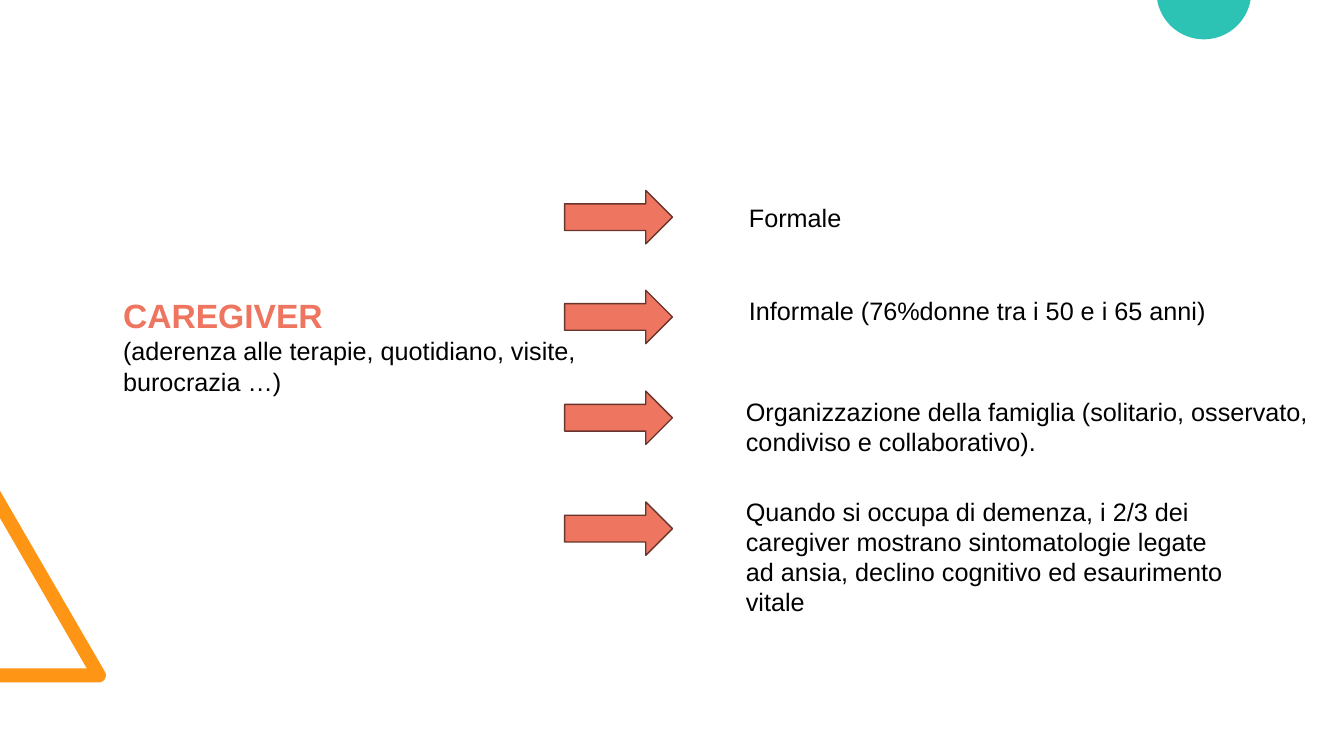
from math import asin, cos, degrees, radians, sin

from pptx import Presentation
from pptx.dml.color import RGBColor
from pptx.enum.shapes import MSO_SHAPE as Preset
from pptx.enum.text import MSO_ANCHOR as Anchor, MSO_AUTO_SIZE as AutoSize, PP_ALIGN as Align
from pptx.util import Inches, Pt

CORAL = RGBColor(0xEE, 0x76, 0x61)
BROWN = RGBColor(0x68, 0x34, 0x2B)
ORANGE = RGBColor(0xFF, 0x95, 0x14)
TEAL = RGBColor(0x2C, 0xC3, 0xB4)
BLACK = RGBColor(0, 0, 0)

ARROW_LEFT, ARROW_WIDTH, ARROW_HEIGHT = 5.6, 1.07, 0.53
ASPECTS = [
    (1.89, (7.33, 1.96, 3.44, 0.4), "Formale"),
    (2.88, (7.33, 2.88, 5.23, 0.4), "Informale (76%donne tra i 50 e i 65 anni)"),
    (3.88, (7.3, 3.88, 6, 0.71),
     "Organizzazione della famiglia (solitario, osservato, condiviso e collaborativo)."),
    (4.98, (7.3, 4.87, 5.1, 1.31),
     "Quando si occupa di demenza, i 2/3 dei caregiver mostrano sintomatologie "
     "legate ad ansia, declino cognitivo ed esaurimento vitale"),
]


def arc(center_x, center_y, radius, start, end, steps=40):
    """Return points along a circular arc, with angles in degrees."""
    angles = [radians(start + (end - start) * step / steps) for step in range(steps + 1)]
    return [(center_x + radius * cos(angle), center_y + radius * sin(angle)) for angle in angles]


class SlideBuilder:
    """Draw styled elements on one slide."""

    def __init__(self, slide, font="Arial", size=18):
        self.slide = slide
        self.font = font
        self.size = size

    def add_text_run(self, paragraph, text, size=None, color=BLACK, bold=False):
        paragraph.alignment = Align.LEFT
        run = paragraph.add_run()
        run.text = text
        run.font.name = self.font
        run.font.size = Pt(size or self.size)
        run.font.bold = bold
        run.font.color.rgb = color

    def title(self, box, heading, detail):
        shape = self.slide.shapes.title
        shape.left, shape.top, shape.width, shape.height = map(Inches, box)
        frame = shape.text_frame
        frame.word_wrap = True
        frame.auto_size = AutoSize.NONE
        frame.vertical_anchor = Anchor.TOP
        self.add_text_run(frame.paragraphs[0], heading, 24, CORAL, True)
        self.add_text_run(frame.add_paragraph(), detail)

    def text(self, box, text):
        frame = self.slide.shapes.add_textbox(*map(Inches, box)).text_frame
        frame.word_wrap = True
        self.add_text_run(frame.paragraphs[0], text)

    def arrow(self, top):
        box = (ARROW_LEFT, top, ARROW_WIDTH, ARROW_HEIGHT)
        shape = self.slide.shapes.add_shape(Preset.RIGHT_ARROW, *map(Inches, box))
        shape.shadow.inherit = False
        shape.fill.solid()
        shape.fill.fore_color.rgb = CORAL
        shape.line.color.rgb = BROWN
        shape.line.width = Pt(1)

    def outline(self, points, color):
        corners = [(Inches(x), Inches(y)) for x, y in points]
        builder = self.slide.shapes.build_freeform(*corners[0])
        builder.add_line_segments(corners[1:], close=True)
        shape = builder.convert_to_shape()
        shape.shadow.inherit = False
        shape.fill.solid()
        shape.fill.fore_color.rgb = color
        shape.line.fill.background()


def main():
    """Build and save the caregiver slide."""
    presentation = Presentation()
    presentation.slide_width = Inches(13.33)
    presentation.slide_height = Inches(7.5)
    builder = SlideBuilder(presentation.slides.add_slide(presentation.slide_layouts[5]))

    triangle = [(0, 6.77), (0, 6.63), (0.86, 6.63), (0, 5.14), (0, 4.87)]
    builder.outline(triangle + arc(0.98, 6.7, 0.07, -30, 90), ORANGE)
    radius, rise = 0.47, 0.08
    edge = degrees(asin(rise / radius))
    builder.outline(arc(11.94, -rise, radius, edge, 180 - edge), TEAL)

    builder.title((1.12, 2.88, 4.7, 1.11), "CAREGIVER",
                  "(aderenza alle terapie, quotidiano, visite, burocrazia …)")
    for arrow_top, box, text in ASPECTS:
        builder.arrow(arrow_top)
        builder.text(box, text)

    presentation.save("out.pptx")


if __name__ == "__main__":
    main()
